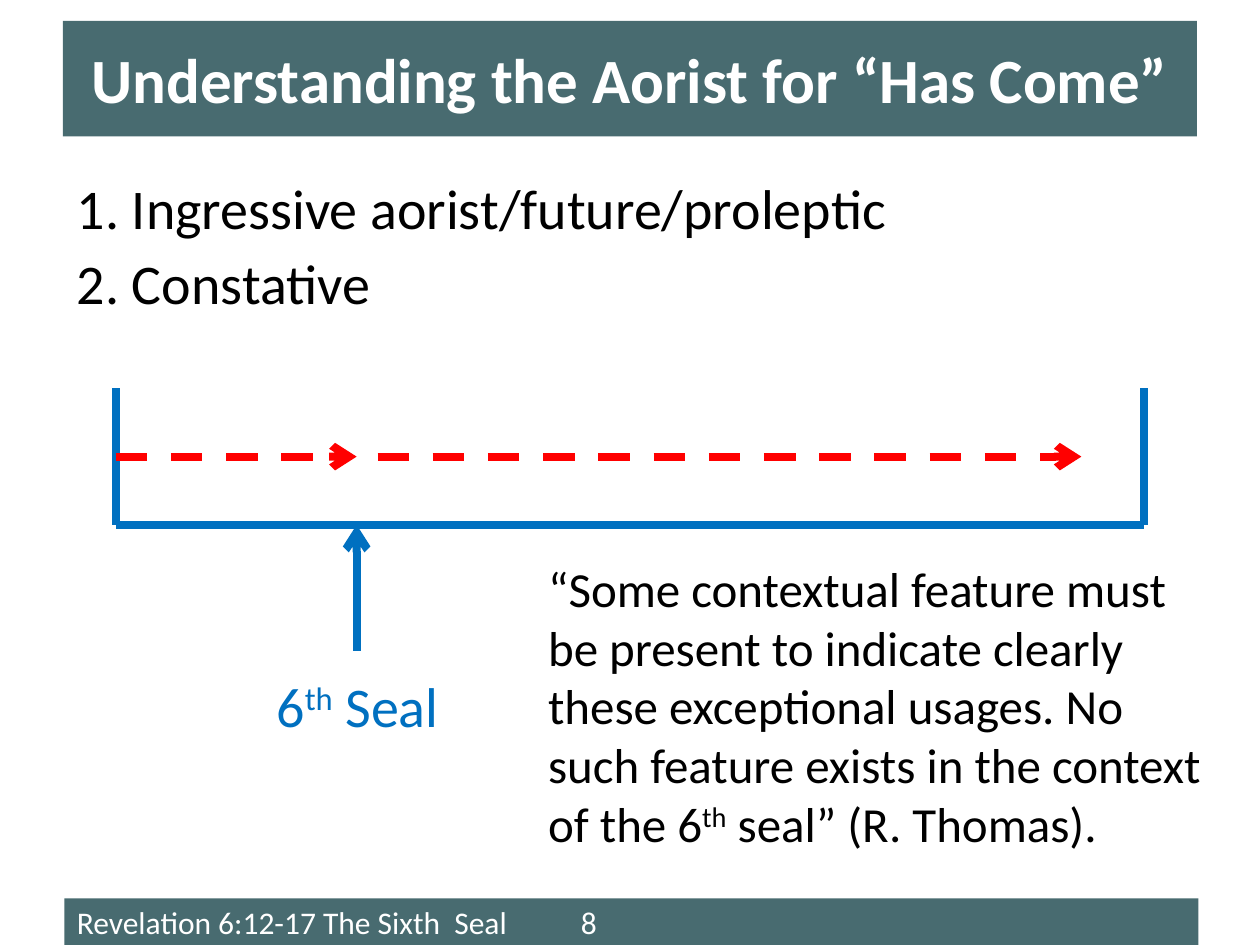
from collections import namedtuple
from dataclasses import dataclass

from lxml.etree import SubElement
from pptx import Presentation
from pptx.dml.color import RGBColor
from pptx.enum.dml import MSO_LINE
from pptx.enum.shapes import MSO_CONNECTOR, MSO_SHAPE
from pptx.enum.text import MSO_ANCHOR, PP_ALIGN
from pptx.oxml.ns import qn
from pptx.util import Cm, Pt

Box = namedtuple("Box", "left top width height")


@dataclass(frozen=True)
class Theme:
    font: str = "Calibri"
    band: str = "486B70"
    light: str = "FFFFFF"
    dark: str = "000000"
    blue: str = "0070C0"
    red: str = "FF0000"
    title_size: int = 36
    body_size: int = 32
    quote_size: int = 28
    footer_size: int = 18
    stroke: float = 4.5


THEME = Theme()


def set_attributes(target, values):
    for name, value in values.items():
        setattr(target, name, value)


def write_text(shape, lines, size, color, bold=False, anchor=MSO_ANCHOR.TOP, **para_format):
    """Fill a shape with lines, each a list of spans; a span starting with ^ is superscript."""
    frame = shape.text_frame
    set_attributes(frame, {"word_wrap": True, "vertical_anchor": anchor})
    for index, spans in enumerate(lines):
        para = frame.add_paragraph() if index else frame.paragraphs[0]
        set_attributes(para, para_format)
        for text in spans:
            span = para.add_run()
            span.text = text.removeprefix("^")
            set_attributes(span.font, {"name": THEME.font, "size": Pt(size), "bold": bold})
            span.font.color.rgb = RGBColor.from_string(color)
            if text.startswith("^"):
                span.font._element.set("baseline", "30000")


def add_text(page, box, lines, size, color, **options):
    shape = page.shapes.add_textbox(*map(Cm, box))
    write_text(shape, lines, size, color, **options)


def add_band(page, box, text, size, **options):
    band = page.shapes.add_shape(MSO_SHAPE.RECTANGLE, *map(Cm, box))
    band.shadow.inherit = False
    band.fill.solid()
    band.fill.fore_color.rgb = RGBColor.from_string(THEME.band)
    band.line.fill.background()
    write_text(band, [[text]], size, THEME.light, anchor=MSO_ANCHOR.MIDDLE, **options)
    return band


def add_line(page, start, end, color, dash=None, arrow=False):
    connector = page.shapes.add_connector(MSO_CONNECTOR.STRAIGHT, *map(Cm, (*start, *end)))
    set_attributes(connector.line, {"width": Pt(THEME.stroke), "dash_style": dash})
    connector.line.color.rgb = RGBColor.from_string(color)
    if arrow:
        SubElement(connector.line._get_or_add_ln(), qn("a:tailEnd"), type="arrow")
    SubElement(connector._element.spPr, qn("a:effectLst"))


def add_footer(page, box, text, number):
    """Draw the footer band with the page number at a tab stop."""
    band = add_band(page, box, f"{text}\t{number}", THEME.footer_size, alignment=PP_ALIGN.LEFT)
    properties = band.text_frame.paragraphs[0]._p.get_or_add_pPr()
    tabs = SubElement(properties, qn("a:tabLst"))
    SubElement(tabs, qn("a:tab"), pos=str(Cm(10.16)), algn="l")


def add_timeline(page, box):
    """Draw an open bracket, the dashed course of events and the seal that marks it."""
    right, bottom = box.left + box.width, box.top + box.height
    middle = box.top + box.height / 2
    seal = box.left + 4.86

    add_line(page, (box.left, bottom), (right, bottom), THEME.blue)
    for side in (box.left, right):
        add_line(page, (side, bottom), (side, box.top), THEME.blue)

    label = Box(seal - 2.42, bottom + 2.83, 4.88, 1.62)
    add_text(page, label, [["6", "^th", " Seal"]], THEME.body_size, THEME.blue,
             alignment=PP_ALIGN.CENTER)
    add_line(page, (seal, bottom + 2.54), (seal, bottom), THEME.blue, arrow=True)

    for start, end in ((seal + 0.42, right - 1.27), (box.left, seal)):
        add_line(page, (start, middle), (end, middle), THEME.red, MSO_LINE.DASH, arrow=True)


def build_slide(deck):
    page = deck.slides.add_slide(deck.slide_layouts[6])
    add_footer(page, Box(1.3, 18.11, 22.86, 0.94), "Revelation 6:12-17 The Sixth  Seal", 8)
    add_text(page, Box(1.3, 3.38, 22.86, 13.34),
             [["1. Ingressive aorist/future/proleptic"], ["2. Constative"]],
             THEME.body_size, THEME.dark, space_before=Pt(4))
    add_band(page, Box(1.27, 0.42, 22.86, 2.33), "Understanding the Aorist for “Has Come”",
             THEME.title_size, bold=True, alignment=PP_ALIGN.CENTER)
    add_timeline(page, Box(2.33, 7.83, 20.74, 2.75))
    quote = ["“Some contextual feature must be present to indicate clearly these exceptional "
             "usages. No such feature exists in the context of the 6", "^th",
             " seal” (R. Thomas)."]
    add_text(page, Box(10.8, 11.13, 13.97, 6.25), [quote], THEME.quote_size, THEME.dark)


def main():
    deck = Presentation()
    set_attributes(deck, {"slide_width": Cm(25.4), "slide_height": Cm(19.05)})
    build_slide(deck)
    deck.save("out.pptx")


if __name__ == "__main__":
    main()
